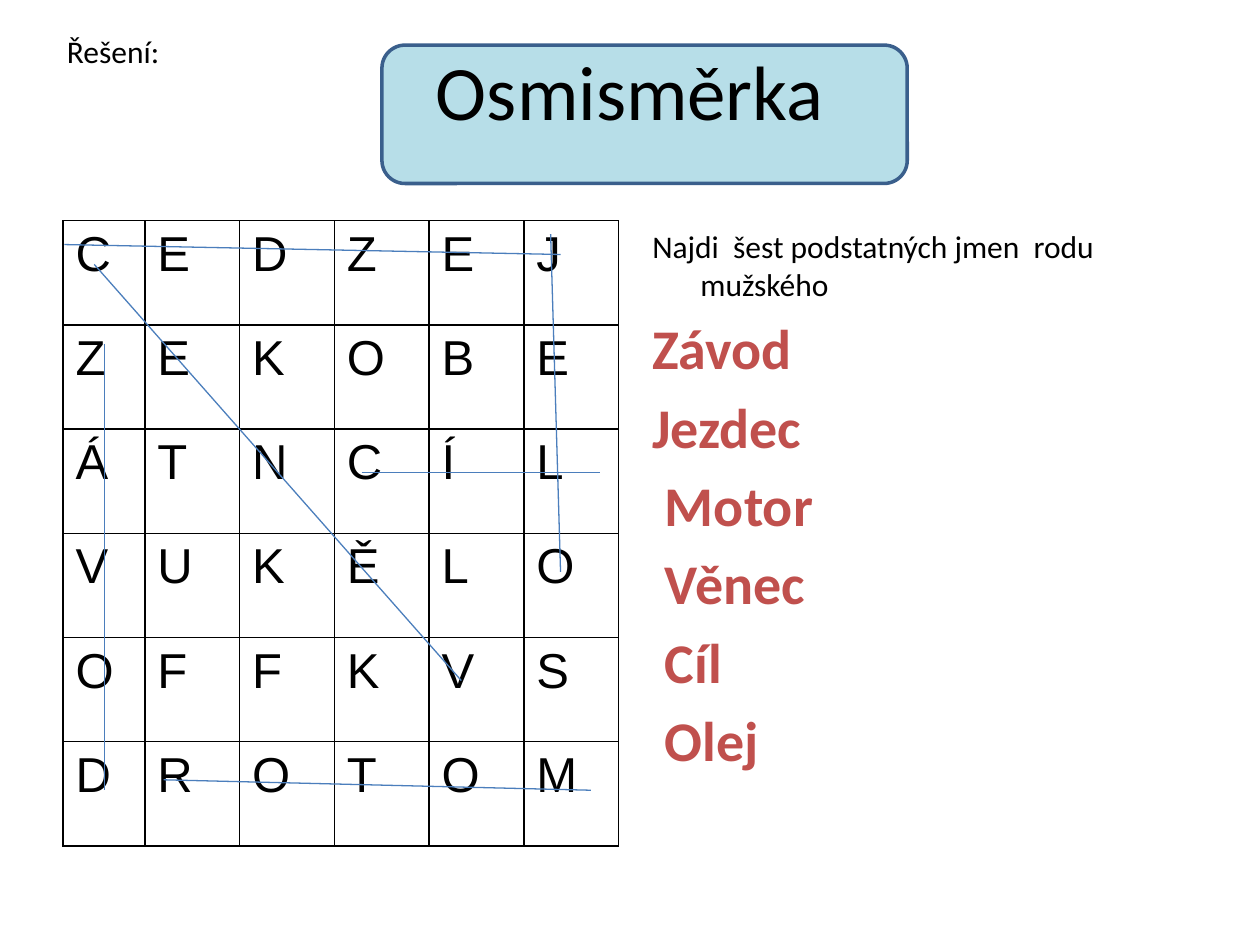
from dataclasses import dataclass

from lxml.etree import SubElement
from pptx import Presentation
from pptx.dml.color import RGBColor
from pptx.enum.shapes import MSO_CONNECTOR, MSO_SHAPE
from pptx.enum.text import MSO_ANCHOR as Anchor, MSO_AUTO_SIZE as AutoSize, PP_ALIGN as Align
from pptx.oxml.ns import qn
from pptx.util import Cm, Pt

BLACK, RED = "000000", "C0504D"
GRID = ["CEDZEJ", "ZEKOBE", "ÁTNCÍL", "VUKĚLO", "OFFKVS", "DROTOM"]
ANSWERS = ["Závod", "Jezdec", " Motor", " Věnec", " Cíl", " Olej"]
GRID_LEFT, GRID_TOP = 1.27, 4.45
FIRST_COLUMN, COLUMN, ROW = 1.65, 1.91, 2.1


@dataclass
class Strike:
    """A line through a found word, in centimetres."""
    x1: float
    y1: float
    x2: float
    y2: float


STRIKES = [
    Strike(2.1, 6.93, 2.1, 15.93),      # Závod
    Strike(11.3, 5.13, 1.3, 4.93),      # Jezdec
    Strike(11.91, 15.93, 3.3, 15.72),   # Motor
    Strike(9.3, 13.72, 1.9, 5.33),      # Věnec
    Strike(7.29, 9.52, 12.09, 9.52),    # Cíl
    Strike(11.3, 11.53, 11.1, 4.72),    # Olej
]


def rgb(value: str) -> RGBColor:
    return RGBColor.from_string(value)


def write(paragraph, text: str, size: float, color: str = BLACK,
          bold: bool = False, font: str = "Calibri") -> None:
    run = paragraph.add_run()
    run.text = text
    run.font.name, run.font.size, run.font.bold = font, Pt(size), bold
    run.font.color.rgb = rgb(color)


def hang(paragraph, indent: float) -> None:
    properties = paragraph._p.get_or_add_pPr()
    properties.set("marL", str(Cm(indent)))
    properties.set("indent", str(-Cm(indent)))


def add_text_frame(slide, left: float, top: float, width: float, height: float):
    frame = slide.shapes.add_textbox(Cm(left), Cm(top), Cm(width), Cm(height)).text_frame
    frame.word_wrap = True
    return frame


def add_border(cell) -> None:
    properties = cell._tc.get_or_add_tcPr()
    for side in ("lnL", "lnR", "lnT", "lnB"):
        line = SubElement(properties, qn(f"a:{side}"), w=str(Pt(1)))
        SubElement(SubElement(line, qn("a:solidFill")), qn("a:srgbClr"), val=BLACK)


def add_grid(slide) -> None:
    count = len(GRID)
    table = slide.shapes.add_table(
        count, count, Cm(GRID_LEFT), Cm(GRID_TOP),
        Cm(FIRST_COLUMN + COLUMN * (count - 1)), Cm(ROW * count)).table
    table.first_row = table.horz_banding = False
    for index, column in enumerate(table.columns):
        column.width = Cm(COLUMN if index else FIRST_COLUMN)
    for row, letters in enumerate(GRID):
        table.rows[row].height = Cm(ROW)
        for column, letter in enumerate(letters):
            cell = table.cell(row, column)
            add_border(cell)
            cell.fill.background()
            write(cell.text_frame.paragraphs[0], letter, 28, font="Arial")


def add_strike(slide, strike: Strike) -> None:
    line = slide.shapes.add_connector(
        MSO_CONNECTOR.STRAIGHT, Cm(strike.x1), Cm(strike.y1), Cm(strike.x2), Cm(strike.y2))
    line.line.color.rgb = rgb("4B7EBC")
    line.line.width = Pt(0.75)
    SubElement(line._element.spPr, qn("a:effectLst"))


def add_heading(slide) -> None:
    title = slide.shapes.title
    title.left, title.top, title.width, title.height = Cm(1.27), Cm(0.76), Cm(22.86), Cm(3.18)
    frame = title.text_frame
    frame.auto_size, frame.vertical_anchor = AutoSize.NONE, Anchor.TOP
    heading = frame.paragraphs[0]
    heading.alignment = Align.CENTER
    hang(heading, 2.34)
    write(heading, "Osmisměrka", 44)

    # Panel goes behind the title
    panel = slide.shapes.add_shape(
        MSO_SHAPE.ROUNDED_RECTANGLE, Cm(7.7), Cm(0.91), Cm(10.59), Cm(2.79))
    panel.shadow.inherit = False
    panel.fill.solid()
    panel.fill.fore_color.rgb = rgb("B7DEE8")
    panel.line.color.rgb = rgb("3A5F8C")
    panel.line.width = Pt(2)
    title._element.addprevious(panel._element)


def add_answers(slide) -> None:
    frame = add_text_frame(slide, 12.9, GRID_TOP, 11.23, 12.57)
    task = frame.paragraphs[0]
    hang(task, 0.97)
    write(task, "Najdi  šest podstatných jmen  rodu mužského", 18)
    for word in ANSWERS:
        answer = frame.add_paragraph()
        hang(answer, 0.97)
        answer.space_before = Pt(6.4)
        write(answer, word, 32, RED, bold=True)


def main() -> None:
    deck = Presentation()
    deck.slide_width, deck.slide_height = Cm(25.4), Cm(19.05)
    slide = deck.slides.add_slide(deck.slide_layouts[5])

    add_heading(slide)
    add_grid(slide)
    add_answers(slide)
    for strike in STRIKES:
        add_strike(slide, strike)

    # Label of the solution
    label = add_text_frame(slide, 1.1, 0.53, 5.2, 1.03)
    write(label.paragraphs[0], "Řešení:", 18)

    deck.save("out.pptx")


if __name__ == "__main__":
    main()
